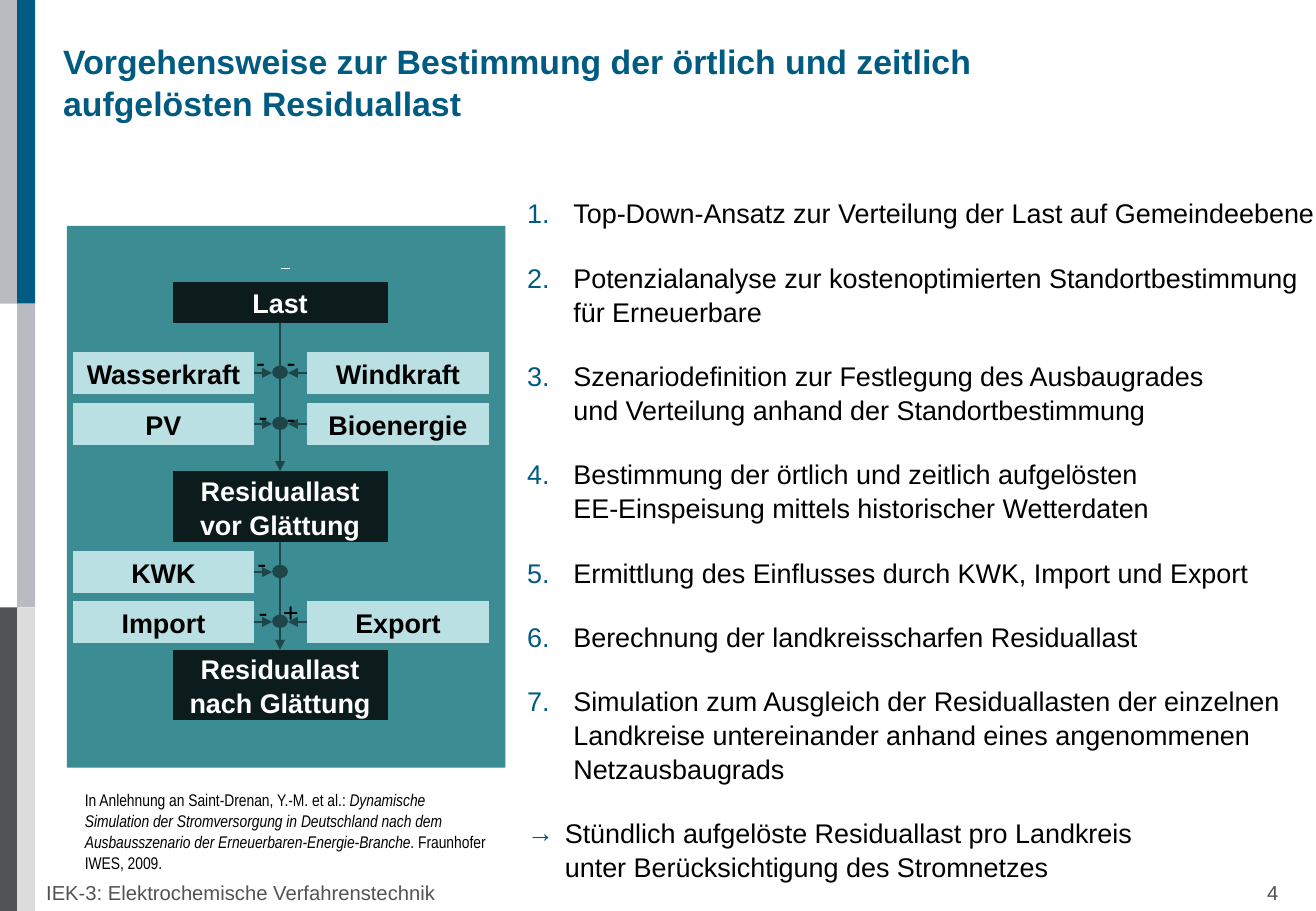
"""Builds the slide on finding the residual load by place and time."""
from dataclasses import dataclass

from lxml.etree import SubElement
from pptx import Presentation
from pptx.dml.color import RGBColor
from pptx.enum.shapes import MSO_CONNECTOR, MSO_SHAPE
from pptx.enum.text import MSO_ANCHOR, MSO_AUTO_SIZE, PP_ALIGN
from pptx.oxml.ns import qn
from pptx.util import Pt

SCALE = 9144


@dataclass(frozen=True)
class Theme:
    blue: str = "005B82"
    grey: str = "B9BBC0"
    dark: str = "515355"
    pale: str = "DCDCDC"
    teal: str = "3C8C93"
    night: str = "0C1C1D"
    mint: str = "BBE0E3"
    pine: str = "1E4649"
    black: str = "000000"
    white: str = "FFFFFF"
    font: str = "Arial"
    narrow: str = "Arial Narrow"
    head: int = 20
    body: int = 16
    foot: int = 12
    note: int = 10


def px(*sizes):
    return [size * SCALE for size in sizes]


def tint(color):
    return RGBColor.from_string(color)


def write(frame, text, size, color, font=Theme.font, bold=False, align=PP_ALIGN.LEFT,
          anchor=MSO_ANCHOR.TOP, left=10, space=0, lines=1.05, mark=None, hang=0, tab=0):
    """Adds one paragraph; newlines break lines and asterisks enclose italics."""
    frame.word_wrap, frame.auto_size = True, MSO_AUTO_SIZE.NONE
    frame.vertical_anchor = anchor
    frame.margin_left, frame.margin_right = px(left, 10)
    frame.margin_top = frame.margin_bottom = 5 * SCALE
    fresh = not frame.paragraphs[0].runs
    para = frame.paragraphs[0] if fresh else frame.add_paragraph()
    props = para._p.get_or_add_pPr()
    if mark:
        props.set("marL", str(hang * SCALE))
        props.set("indent", str(-hang * SCALE))
        SubElement(SubElement(props, qn("a:buClr")), qn("a:srgbClr")).set("val", Theme.blue)
        SubElement(props, qn("a:buFont")).set("typeface", font)
        if mark == "1.":
            SubElement(props, qn("a:buAutoNum")).set("type", "arabicPeriod")
        else:
            SubElement(props, qn("a:buChar")).set("char", mark)
    if tab:
        stop = SubElement(SubElement(props, qn("a:tabLst")), qn("a:tab"))
        stop.set("pos", str(tab * SCALE))
        stop.set("algn", "r")
    para.alignment, para.line_spacing = align, lines
    para.space_before = Pt(0 if fresh else space)
    for turn, part in enumerate(text.split("*")):
        for row, line in enumerate(part.split("\n")):
            if row:
                para.add_line_break()
            run = para.add_run()
            run.text = line
            run.font.name, run.font.size = font, Pt(size)
            run.font.bold, run.font.italic = bold, turn % 2 == 1
            run.font.color.rgb = tint(color)


class Board:
    """Holds the theme and the current slide."""

    def __init__(self, deck, theme):
        self.theme = theme
        self.slide = deck.slides.add_slide(deck.slide_layouts[5])
        self.shapes = self.slide.shapes

    def title(self, text, *place):
        head = self.shapes.title
        head.left, head.top, head.width, head.height = px(*place)
        write(head.text_frame, text, self.theme.head, self.theme.blue, bold=True,
              anchor=MSO_ANCHOR.MIDDLE, left=0)

    def block(self, color, *place, kind=MSO_SHAPE.RECTANGLE):
        shape = self.shapes.add_shape(kind, *px(*place))
        shape.shadow.inherit = False
        shape.fill.solid()
        shape.fill.fore_color.rgb = tint(color)
        shape.line.fill.background()
        return shape

    def box(self, text, fill, color, *place):
        shape = self.block(fill, *place, kind=MSO_SHAPE.FLOWCHART_PROCESS)
        write(shape.text_frame, text, self.theme.body, color, bold=True,
              align=PP_ALIGN.CENTER, anchor=MSO_ANCHOR.MIDDLE)
        return shape

    def line(self, color, width, *ends):
        link = self.shapes.add_connector(MSO_CONNECTOR.STRAIGHT, *px(*ends))
        link.line.color.rgb, link.line.width = tint(color), Pt(width)
        SubElement(link._element.spPr, qn("a:effectLst"))
        return link

    def arrow(self, start, side, *ends):
        link = self.line(self.theme.pine, 1.5, *ends)
        SubElement(link.line._get_or_add_ln(), qn("a:tailEnd")).set("type", "triangle")
        link.begin_connect(start, side)
        return link

    def text(self, text, size, color, *place, **style):
        frame = self.shapes.add_textbox(*px(*place)).text_frame
        for item in [text] if isinstance(text, str) else text:
            write(frame, item, size, color, **style)
        return frame


STEPS = [
    "Top-Down-Ansatz zur Verteilung der Last auf Gemeindeebene",
    "Potenzialanalyse zur kostenoptimierten Standortbestimmung\nfür Erneuerbare",
    "Szenariodefinition zur Festlegung des Ausbaugrades\n"
    "und Verteilung anhand der Standortbestimmung",
    "Bestimmung der örtlich und zeitlich aufgelösten\n"
    "EE-Einspeisung mittels historischer Wetterdaten",
    "Ermittlung des Einflusses durch KWK, Import und Export",
    "Berechnung der landkreisscharfen Residuallast",
    "Simulation zum Ausgleich der Residuallasten der einzelnen\n"
    "Landkreise untereinander anhand eines angenommenen\nNetzausbaugrads",
]
GOAL = "Stündlich aufgelöste Residuallast pro Landkreis\nunter Berücksichtigung des Stromnetzes"
CITE = ("In Anlehnung an Saint-Drenan, Y.-M. et al.: *Dynamische Simulation der "
        "Stromversorgung in Deutschland nach dem Ausbausszenario der "
        "Erneuerbaren-Energie-Branche*. Fraunhofer IWES, 2009.")
LOADS = [("Last", 232, 34), ("Residuallast vor Glättung", 388, 58),
         ("Residuallast nach Glättung", 535, 58)]
FLOWS = [(290, "Wasserkraft", "Windkraft"), (332, "PV", "Bioenergie"),
         (454, "KWK", None), (495, "Import", "Export")]
SIGNS = [("-", 201, 278), ("-", 226, 278), ("-", 203, 323), ("-", 226, 324),
         ("-", 202, 444), ("-", 203, 484), ("+", 223, 484)]
STRIPES = [("grey", 0, 0), ("dark", 0, 500), ("blue", 14, 0), ("grey", 14, 250),
           ("pale", 14, 500)]


def chart(board):
    """Draws the flow from load to residual load."""
    look = board.theme
    board.block(look.teal, 55, 186, 361, 446)
    board.line(look.white, 1, 231, 221, 239, 221)
    loads = [board.box(name, look.night, look.white, 142, top, 177, tall)
             for name, top, tall in LOADS]
    for upper, lower in zip(loads, loads[1:]):
        board.arrow(upper, 2, 230, 266, 230, 388).end_connect(lower, 0)
    for top, *names in FLOWS:
        mid = top + 17
        for name, left, side, start, end in zip(names, (60, 253), (3, 1), (209, 253), (224, 237)):
            if name:
                box = board.box(name, look.mint, look.black, left, top, 149, 34)
                board.arrow(box, side, start, mid, end, mid)
        board.block(look.pine, 224, mid - 6, 13, 11, kind=MSO_SHAPE.OVAL)
    for sign, left, top in SIGNS:
        board.text(sign, look.body, look.black, left, top, 32, 34)


def main():
    """Builds and saves the deck."""
    deck = Presentation()
    deck.slide_width, deck.slide_height = px(1083, 750)
    look = Theme()
    board = Board(deck, look)
    for name, left, top in STRIPES:
        board.block(getattr(look, name), left, top, 15, 250)
    board.title("Vorgehensweise zur Bestimmung der örtlich und zeitlich\n"
                "aufgelösten Residuallast", 52, 28, 773, 77)
    chart(board)
    frame = board.text(STEPS, look.body, look.black, 424, 156, 675, 564,
                       space=18, mark="1.", hang=38)
    write(frame, GOAL, look.body, look.black, space=18, mark="→", hang=31)
    board.text(CITE, look.note, look.black, 60, 644, 353, 77, font=look.narrow)
    board.text("IEK-3: Elektrochemische Verfahrenstechnik\t4", look.foot, look.dark,
               38, 720, 1061, 30, left=0, lines=1, tab=1014)
    deck.save("out.pptx")


if __name__ == "__main__":
    main()
